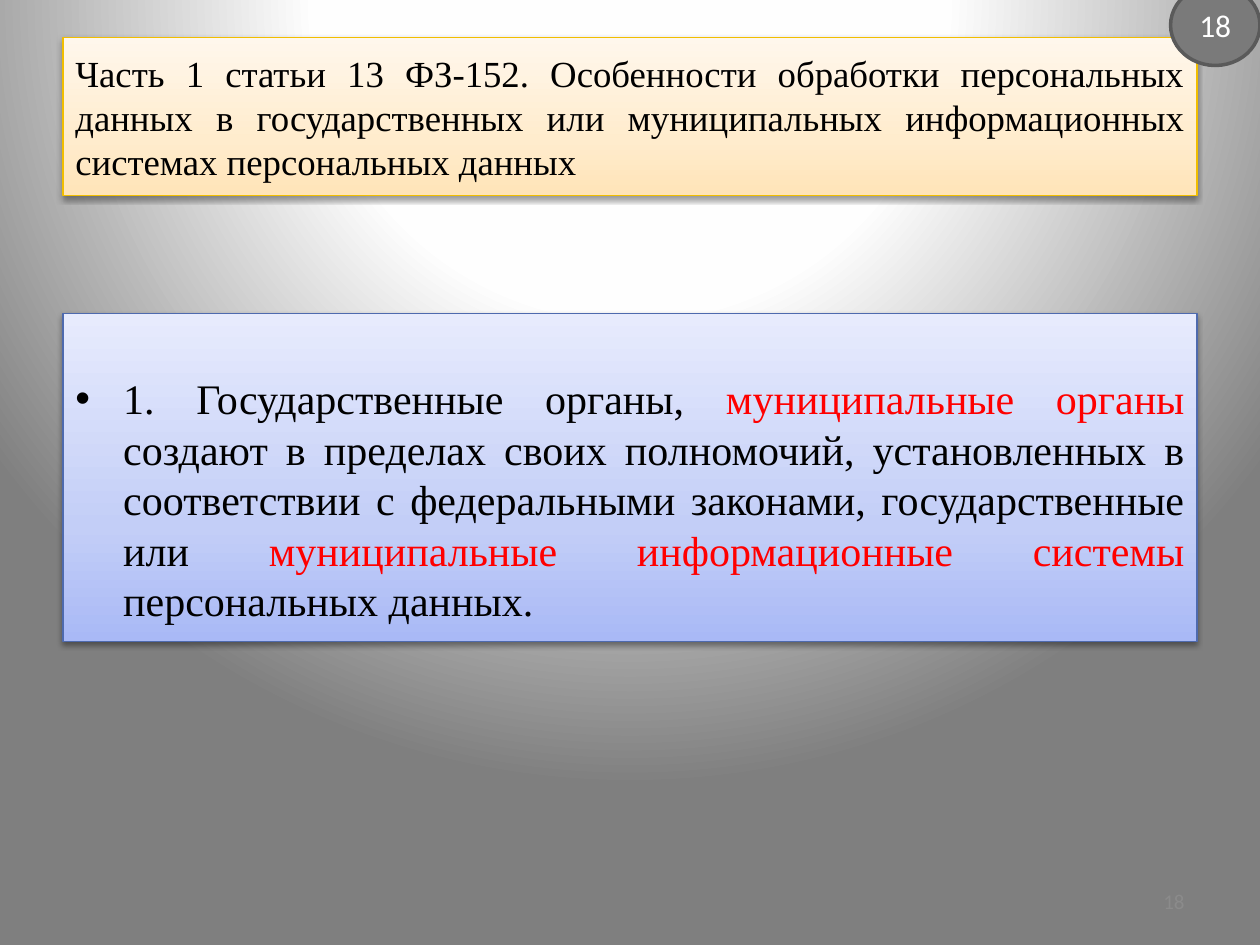
from dataclasses import dataclass

from lxml import etree
from pptx import Presentation
from pptx.dml.color import RGBColor
from pptx.enum import shapes, text
from pptx.oxml import ns, parse_xml
from pptx.util import Inches, Pt

COLORS = {
    "black": "000000", "red": "FF0000", "white": "FFFFFF",
    "gold": "F1BE00", "blue": "4E6AAE",
    "badge": "7A7A7A", "badge_edge": "5A5A5A", "page_number": "8B8B8B",
}
BACKDROP_STOPS = ((0, "FFFFFF"), (40, "FEFEFE"), (100, "7F7F7F"))
CREAM_STOPS = ((0, "FFE4B8"), (35, "FFECCD"), (100, "FFF7EC"))
LILAC_STOPS = ((0, "A9B9F6"), (35, "C3CEF7"), (100, "E7EBFD"))
LINEAR_UP = '<a:lin ang="16200000" scaled="0"/>'
SPOTLIGHT = ('<a:path path="circle"><a:fillToRect l="50000" t="-80000" '
             'r="50000" b="180000"/></a:path>')
SERIF, SANS = "Times New Roman", "Calibri"


@dataclass
class Panel:
    top: float
    height: float
    stops: tuple
    edge: str
    size: float
    anchor: text.MSO_ANCHOR
    top_inset: float
    phrases: tuple  # (wording, colour name) pairs


def rgb(name: str) -> RGBColor:
    return RGBColor.from_string(COLORS[name])


def set_gradient(properties, stops: tuple, direction: str) -> None:
    """Swap the solid fill held by the properties element for a gradient."""
    stop_list = "".join(
        f'<a:gs pos="{position * 1000}"><a:srgbClr val="{color}"/></a:gs>'
        for position, color in stops)
    gradient = parse_xml(f'<a:gradFill {ns.nsdecls("a")} rotWithShape="1">'
                         f'<a:gsLst>{stop_list}</a:gsLst>{direction}</a:gradFill>')
    properties.replace(properties.find(ns.qn("a:solidFill")), gradient)


def add_soft_shadow(shape) -> None:
    shape.shadow.inherit = False
    effects = shape.element.spPr.find(ns.qn("a:effectLst"))
    effects.append(parse_xml(
        f'<a:outerShdw {ns.nsdecls("a")} blurRad="{Pt(3.1)}" dist="{Pt(1.6)}" '
        'dir="5400000" rotWithShape="0"><a:srgbClr val="000000">'
        '<a:alpha val="38000"/></a:srgbClr></a:outerShdw>'))


def add_phrase(paragraph, wording: str, font: str, size: float, color: str) -> None:
    run = paragraph.add_run()
    run.text = wording
    run.font.name = font
    run.font.size = Pt(size)
    run.font.color.rgb = rgb(color)


def add_panel(slide, panel: Panel):
    """Draw a full-width panel and return its justified paragraph."""
    box = slide.shapes.add_shape(shapes.MSO_SHAPE.RECTANGLE, Inches(0.5),
                                 Inches(panel.top), Inches(9), Inches(panel.height))
    box.fill.solid()
    set_gradient(box.element.spPr, panel.stops, LINEAR_UP)
    box.line.color.rgb = rgb(panel.edge)
    box.line.width = Pt(0.75)
    add_soft_shadow(box)
    frame = box.text_frame
    frame.word_wrap = True
    frame.vertical_anchor = panel.anchor
    frame.margin_top = Inches(panel.top_inset)
    paragraph = frame.paragraphs[0]
    paragraph.alignment = text.PP_ALIGN.JUSTIFY
    for wording, color in panel.phrases:
        add_phrase(paragraph, wording, SERIF, panel.size, color)
    return paragraph


def add_bullet(paragraph) -> None:
    properties = paragraph._p.get_or_add_pPr()
    properties.set("marL", str(Inches(0.38)))
    properties.set("indent", str(Inches(-0.38)))
    etree.SubElement(properties, ns.qn("a:buFont")).set("typeface", "Arial")
    etree.SubElement(properties, ns.qn("a:buChar")).set("char", "•")


def add_badge(slide) -> None:
    badge = slide.shapes.add_shape(shapes.MSO_SHAPE.OVAL, Inches(9.29), Inches(-0.12),
                                   Inches(0.71), Inches(0.64))
    badge.fill.solid()
    badge.fill.fore_color.rgb = rgb("badge")
    badge.line.color.rgb = rgb("badge_edge")
    badge.line.width = Pt(2)
    badge.shadow.inherit = False
    badge.text_frame.vertical_anchor = text.MSO_ANCHOR.MIDDLE
    paragraph = badge.text_frame.paragraphs[0]
    paragraph.alignment = text.PP_ALIGN.CENTER
    add_phrase(paragraph, "18", SANS, 18, "white")


def add_page_number(slide) -> None:
    footer = slide.shapes.add_textbox(Inches(7.17), Inches(6.95), Inches(2.33), Inches(0.4))
    footer.text_frame.word_wrap = True
    footer.text_frame.vertical_anchor = text.MSO_ANCHOR.MIDDLE
    paragraph = footer.text_frame.paragraphs[0]
    paragraph.alignment = text.PP_ALIGN.RIGHT
    add_phrase(paragraph, "18", SANS, 12, "page_number")


HEADING = Panel(0.3, 1.25, CREAM_STOPS, "gold", 21, text.MSO_ANCHOR.MIDDLE, 0.05, (
    ("Часть 1 статьи 13 ФЗ-152. Особенности обработки персональных данных в "
     "государственных или муниципальных информационных системах персональных данных",
     "black"),
))
PROVISION = Panel(2.49, 2.6, LILAC_STOPS, "blue", 24, text.MSO_ANCHOR.TOP, 0.47, (
    ("1. Государственные органы, ", "black"),
    ("муниципальные органы ", "red"),
    ("создают в пределах своих полномочий, установленных в соответствии с "
     "федеральными законами, государственные или ", "black"),
    ("муниципальные информационные системы ", "red"),
    ("персональных данных.", "black"),
))


def main() -> None:
    deck = Presentation()
    deck.slide_width, deck.slide_height = Inches(10), Inches(7.5)
    slide = deck.slides.add_slide(deck.slide_layouts[6])
    slide.background.fill.solid()
    set_gradient(slide.element.find(".//" + ns.qn("p:bgPr")), BACKDROP_STOPS, SPOTLIGHT)
    add_page_number(slide)
    add_panel(slide, HEADING)
    add_bullet(add_panel(slide, PROVISION))
    add_badge(slide)
    deck.save("out.pptx")


if __name__ == "__main__":
    main()
